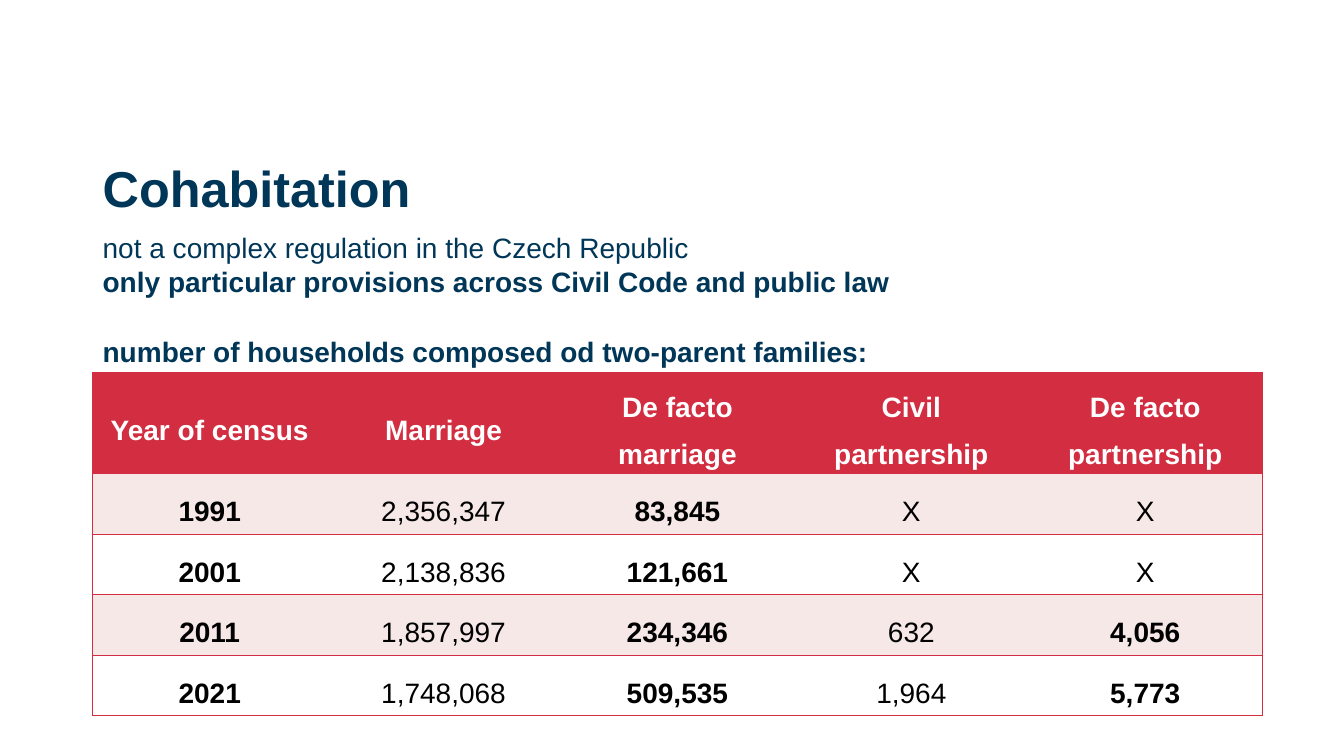
import pptx
import pptx.dml.color
import pptx.enum.text
import pptx.oxml
import pptx.oxml.ns
import pptx.util
from dataclasses import dataclass

Inches, Pt = pptx.util.Inches, pptx.util.Pt
RGB = pptx.dml.color.RGBColor.from_string
ALIGN, ANCHOR = pptx.enum.text.PP_ALIGN, pptx.enum.text.MSO_ANCHOR


@dataclass
class Theme:
    font: str = "Arial"
    navy: str = "003657"
    red: str = "D22D40"
    pink: str = "F7E8E8"
    white: str = "FFFFFF"
    black: str = "000000"
    title: int = 36
    body: int = 20


theme = Theme()
LEFT, TEXT_W = 0.92, 11.5
COL_W, ROW_H, HEAD_H = 2.32, 0.6, 0.93
BOLD_COLS = {0, 2, 4}

intro = [
    ("not a complex regulation in the Czech Republic", False, 0),
    ("only particular provisions across Civil Code and public law", True, 0),
    ("number of households composed od two-parent families:", True, 25),
]
households = [
    ["Year of census", "Marriage", "De facto marriage", "Civil partnership", "De facto partnership"],
    ["1991", "2,356,347", "83,845", "X", "X"],
    ["2001", "2,138,836", "121,661", "X", "X"],
    ["2011", "1,857,997", "234,346", "632", "4,056"],
    ["2021", "1,748,068", "509,535", "1,964", "5,773"],
]


def style(p, size, color, bold, align, spacing):
    p.alignment, p.line_spacing = align, spacing
    for r in p.runs:
        r.font.name, r.font.size, r.font.bold = theme.font, Pt(size), bold
        r.font.color.rgb = RGB(color)


def set_borders(cell, shown):
    """Draw the sides named in shown (out of L, R, T, B) and clear the others."""
    ns = pptx.oxml.ns.nsdecls("a")
    for i, side in enumerate("LRTB"):
        paint = f'<a:solidFill><a:srgbClr val="{theme.red}"/></a:solidFill>' if side in shown else "<a:noFill/>"
        line = pptx.oxml.parse_xml(f'<a:ln{side} {ns} w="12700">{paint}</a:ln{side}>')
        cell._tc.get_or_add_tcPr().insert(i, line)


prs = pptx.Presentation()
prs.slide_width, prs.slide_height = Inches(13.33), Inches(7.5)
s = prs.slides.add_slide(prs.slide_layouts[6])

# Heading
tf = s.shapes.add_textbox(Inches(LEFT), Inches(1.13), Inches(TEXT_W), Inches(1.08)).text_frame
tf.word_wrap, tf.vertical_anchor = True, ANCHOR.BOTTOM
tf.text = "Cohabitation"
style(tf.paragraphs[0], theme.title, theme.navy, True, ALIGN.LEFT, 1.0)

# Introduction
tf = s.shapes.add_textbox(Inches(LEFT), Inches(2.22), Inches(TEXT_W), Inches(1.56)).text_frame
tf.word_wrap = True
tf.text = "\n".join(text for text, _, _ in intro)
for p, (_, bold, gap) in zip(tf.paragraphs, intro):
    style(p, theme.body, theme.navy, bold, ALIGN.JUSTIFY, 1.04)
    if gap:
        p.space_before = Pt(gap)

# Census table
n_rows, n_cols = len(households), len(households[0])
table = s.shapes.add_table(
    n_rows, n_cols, Inches(LEFT), Inches(3.7),
    Inches(n_cols * COL_W), Inches(HEAD_H + (n_rows - 1) * ROW_H),
).table
for column in table.columns:
    column.width = Inches(COL_W)
for i, values in enumerate(households):
    header = i == 0
    table.rows[i].height = Inches(HEAD_H if header else ROW_H)
    fill = theme.red if header else theme.pink if i % 2 else theme.white
    for j, value in enumerate(values):
        cell = table.cell(i, j)
        cell.text = value
        cell.vertical_anchor = ANCHOR.MIDDLE
        cell.margin_left = cell.margin_right = Inches(0.07)
        cell.margin_top = cell.margin_bottom = 0
        cell.fill.solid()
        cell.fill.fore_color.rgb = RGB(fill)
        set_borders(cell, "TB" + ("L" if j == 0 else "R" if j == n_cols - 1 else ""))
        # An X marks a year without data and stays regular
        bold = header or (j in BOLD_COLS and value != "X")
        style(cell.text_frame.paragraphs[0], theme.body,
              theme.white if header else theme.black, bold, ALIGN.CENTER, 1.5)

prs.save("out.pptx")
